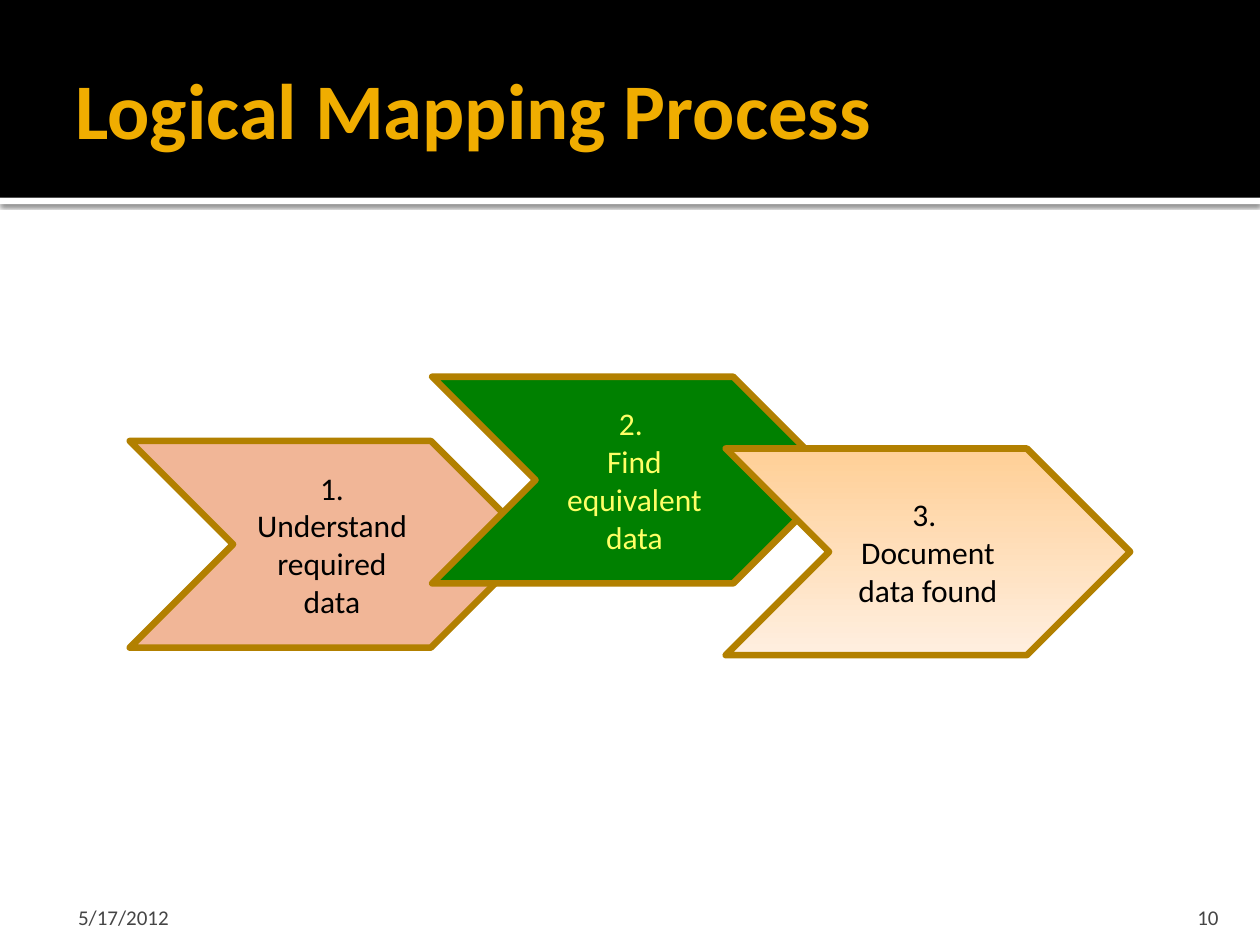
"""Build the logical mapping process slide."""
from lxml.etree import SubElement
from pptx import Presentation
from pptx.dml.color import RGBColor
from pptx.enum.shapes import MSO_SHAPE as Shape
from pptx.enum.text import MSO_ANCHOR as Anchor, PP_ALIGN as Align
from pptx.oxml import parse_xml
from pptx.oxml.ns import nsdecls, qn
from pptx.util import Inches, Pt

FONT = "Calibri"
COLORS = {
    "white": "FFFFFF", "black": "000000", "gold": "F0AD00", "outline": "B28000",
    "peach": "F1B697", "green": "008000", "yellow": "FFFF66",
    "orange": "FFCF96", "cream": "FFEFE0", "gray": "454545",
}
STEPS = [
    (1.03, 3.5, ["peach"], "black", "1. Understand required data"),
    (3.43, 2.99, ["green"], "yellow", "2. \nFind equivalent data"),
    (5.76, 3.56, ["orange", "cream"], "black", "3. \nDocument data found"),
]


def rgb(name):
    return RGBColor.from_string(COLORS[name])


def write(shape, text, size, color, align, anchor, bold=False, insets=None):
    frame = shape.text_frame
    frame.text = text
    frame.word_wrap = True
    frame.vertical_anchor = anchor
    if insets:
        (frame.margin_left, frame.margin_top,
         frame.margin_right, frame.margin_bottom) = map(Inches, insets)
    for para in frame.paragraphs:
        para.alignment = align
        for span in para.runs:
            span.font.name = FONT
            span.font.size = Pt(size)
            span.font.bold = bold
            span.font.color.rgb = rgb(color)


def place(shape, left, top, width, height):
    shape.left, shape.top = Inches(left), Inches(top)
    shape.width, shape.height = Inches(width), Inches(height)


def paint(shape, colors):
    if len(colors) == 1:
        shape.fill.solid()
        shape.fill.fore_color.rgb = rgb(colors[0])
        return
    shape.fill.gradient()
    shape.fill.gradient_angle = 270
    for stop, color in zip(shape.fill.gradient_stops, colors):
        stop.color.rgb = rgb(color)


def add_shape(page, kind, left, top, width, height, colors):
    shape = page.shapes.add_shape(
        kind, Inches(left), Inches(top), Inches(width), Inches(height))
    shape.shadow.inherit = False
    paint(shape, colors)
    return shape


def add_band(page, index, top, height, color):
    band = add_shape(page, Shape.RECTANGLE, 0, top, 10, height, [color])
    band.line.fill.background()
    page.shapes._spTree.insert(2 + index, band._element)
    return band


def add_drop_shadow(shape):
    effects = shape._element.spPr.find(qn("a:effectLst"))
    effects.append(parse_xml(
        f'<a:outerShdw {nsdecls("a")} blurRad="{Pt(2.5)}" dist="{Pt(0.8)}" '
        f'dir="5400000" rotWithShape="0"><a:srgbClr val="{COLORS["black"]}">'
        '<a:alpha val="60000"/></a:srgbClr></a:outerShdw>'))


def add_step(page, left, top, colors, text_color, text):
    step = add_shape(page, Shape.CHEVRON, left, top, 3.21, 1.64, colors)
    step.line.color.rgb = rgb("outline")
    step.line.width = Pt(3.78)
    SubElement(step.line._ln, qn("a:round"))
    write(step, text, 18, text_color, Align.CENTER, Anchor.MIDDLE)


def add_footer(page, left, width, text, align, insets):
    box = page.shapes.add_textbox(
        Inches(left), Inches(7.08), Inches(width), Inches(0.3))
    write(box, text, 12, "gray", align, Anchor.BOTTOM, insets=insets)


def add_title(page, text):
    title = page.shapes.title
    place(title, 0.5, 0.17, 9, 1.37)
    write(title, text, 45, "gold", Align.LEFT, Anchor.MIDDLE, bold=True,
          insets=(0.1, 0.05, 0.05, 0.05))


def main():
    deck = Presentation()
    deck.slide_width, deck.slide_height = Inches(10), Inches(7.5)
    page = deck.slides.add_slide(deck.slide_layouts[5])
    page.background.fill.solid()
    page.background.fill.fore_color.rgb = rgb("white")
    add_drop_shadow(add_band(page, 0, 1.57, 0.05, "white"))
    add_band(page, 1, 0, 1.57, "black")
    add_title(page, "Logical Mapping Process")
    for step in STEPS:
        add_step(page, *step)
    add_footer(page, 0.5, 2.33, "5/17/2012", Align.LEFT, (0.12, 0.05, 0.05, 0))
    add_footer(page, 8.97, 0.8, "10", Align.RIGHT, (0.1, 0.05, 0.1, 0))
    deck.save("out.pptx")


if __name__ == "__main__":
    main()
